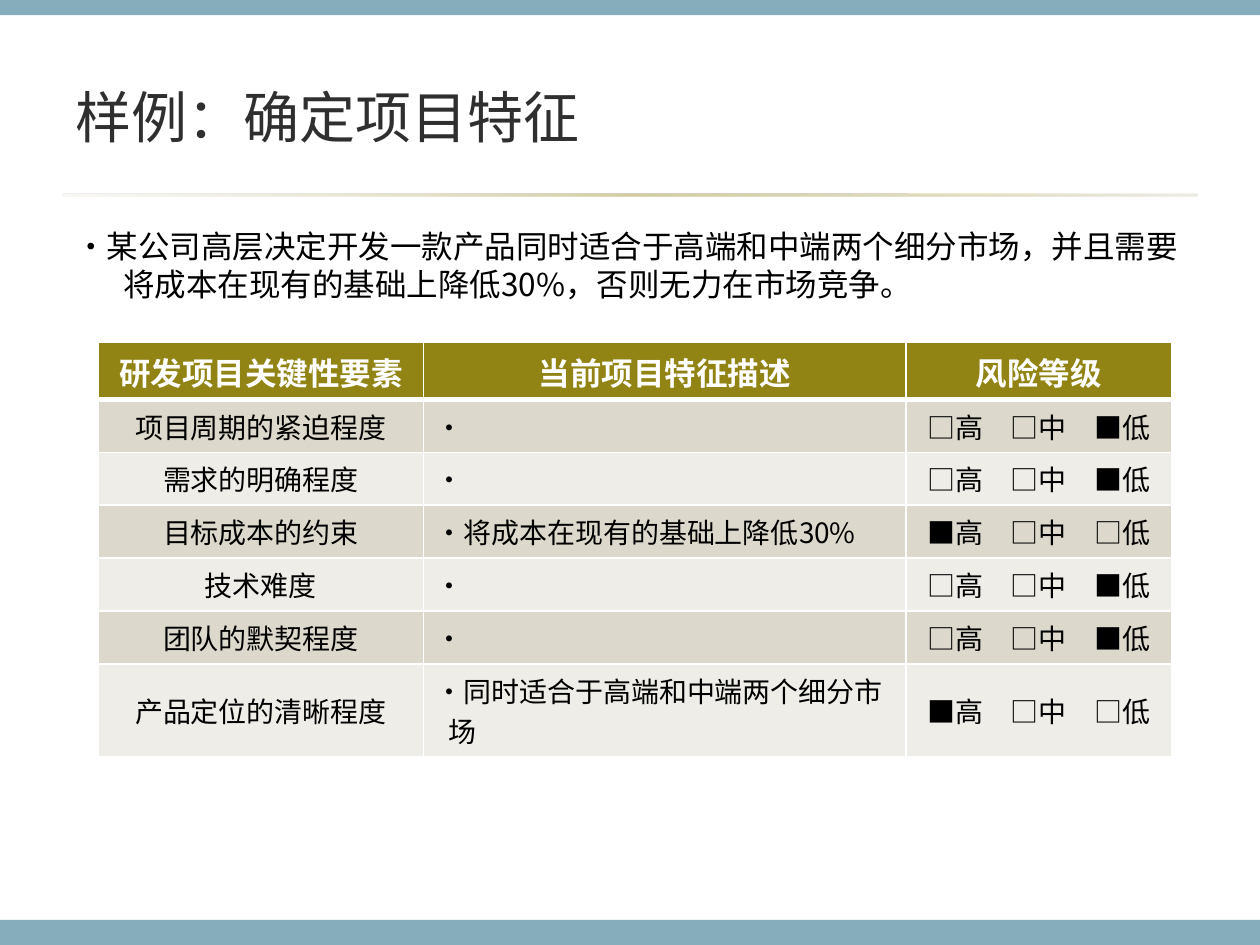
from lxml import etree
from pptx import Presentation
from pptx.dml.color import RGBColor
from pptx.enum.shapes import MSO_SHAPE
from pptx.enum.text import MSO_ANCHOR, PP_ALIGN
from pptx.oxml.ns import qn
from pptx.util import Inches, Pt

RECT = MSO_SHAPE.RECTANGLE
MIDDLE = MSO_ANCHOR.MIDDLE
LEFT, CENTER = PP_ALIGN.LEFT, PP_ALIGN.CENTER
FONT = "Noto Sans CJK SC"
COLORS = {"band": "85ADBC", "olive": "918415", "sand": "DCD9CC", "pale": "EEEDE8",
          "title": "2F2F2F", "black": "000000", "white": "FFFFFF"}

# Size, colour and weight of each kind of text
FORMATS = {
    "title": {"size": Pt(32), "color": "title", "bold": False},
    "body": {"size": Pt(18), "color": "black", "bold": False},
    "header": {"size": Pt(18), "color": "white", "bold": True},
    "cell": {"size": Pt(16), "color": "black", "bold": False},
}

TITLE = "样例：确定项目特征"
BODY = ("·某公司高层决定开发一款产品同时适合于高端和中端两个细分市场，"
        "并且需要将成本在现有的基础上降低30%，否则无力在市场竞争。")
HEADERS = ["研发项目关键性要素", "当前项目特征描述", "风险等级"]
LEVELS = "高中低"
# Key factor, description lines, risk level
FACTORS = [
    ("项目周期的紧迫程度", ["·"], "低"),
    ("需求的明确程度", ["·"], "低"),
    ("目标成本的约束", ["·将成本在现有的基础上降低30%"], "高"),
    ("技术难度", ["·"], "低"),
    ("团队的默契程度", ["·"], "低"),
    ("产品定位的清晰程度", ["·同时适合于高端和中端两个细分市", "场"], "高"),
]
COLUMN_WIDTHS = [2.58, 3.83, 2.11]
HEADER_HEIGHT = 0.45
CELL_PADDING, LINE_HEIGHT = 0.1, 0.32


def rgb(name):
    return RGBColor.from_string(COLORS[name])


def add_color(parent, name, opacity=100):
    solid = etree.SubElement(parent, qn("a:srgbClr"), val=COLORS[name])
    if opacity < 100:
        etree.SubElement(solid, qn("a:alpha"), val=str(opacity * 1000))


def write(paragraph, text, kind, align=LEFT):
    paragraph.alignment = align
    run = paragraph.add_run()
    run.text = text
    style = FORMATS[kind]
    for name, value in {"name": FONT, "size": style["size"], "bold": style["bold"]}.items():
        setattr(run.font, name, value)
    run.font.color.rgb = rgb(style["color"])
    # East Asian typeface
    etree.SubElement(run.font._element, qn("a:ea"), typeface=FONT)


def add_bar(slide, left, top, width, height):
    bar = slide.shapes.add_shape(RECT, Inches(left), Inches(top), Inches(width), Inches(height))
    bar.shadow.inherit = False
    bar.line.fill.background()
    bar.fill.solid()
    bar.fill.fore_color.rgb = rgb("band")
    return bar


def add_divider(slide, left, top, width, height):
    divider = add_bar(slide, left, top, width, height)
    divider.fill.gradient()
    divider.fill.gradient_angle = 0
    stops = divider._element.spPr.find(qn("a:gradFill")).find(qn("a:gsLst"))
    for stop in list(stops):
        stops.remove(stop)
    for position, name, opacity in [(0, "sand", 20), (50, "olive", 40), (100, "sand", 50)]:
        stop = etree.SubElement(stops, qn("a:gs"), pos=str(position * 1000))
        add_color(stop, name, opacity)


def add_text(slide, left, top, width, height, text, kind):
    box = slide.shapes.add_textbox(Inches(left), Inches(top), Inches(width), Inches(height))
    frame = box.text_frame
    frame.word_wrap = True
    write(frame.paragraphs[0], text, kind)
    return frame


def set_indent(paragraph, left, first=0):
    properties = paragraph._p.get_or_add_pPr()
    properties.set("marL", str(Inches(left)))
    properties.set("indent", str(Inches(first)))


def add_title(slide, left, top, width, height):
    add_text(slide, left, top, width, height, TITLE, "title").vertical_anchor = MIDDLE


def add_body(slide, left, top, width, height):
    paragraph = add_text(slide, left, top, width, height, BODY, "body").paragraphs[0]
    paragraph.space_before = Pt(3.6)
    set_indent(paragraph, 0.38, -0.38)


def style_cell(cell, fill, top_width, bottom_width):
    cell.vertical_anchor = MIDDLE
    properties = cell._tc.get_or_add_tcPr()
    for side, width in {"lnL": 1, "lnR": 1, "lnT": top_width, "lnB": bottom_width}.items():
        border = etree.SubElement(properties, qn(f"a:{side}"), w=str(Pt(width)))
        add_color(etree.SubElement(border, qn("a:solidFill")), "white")
    cell.fill.solid()
    cell.fill.fore_color.rgb = rgb(fill)


def risk_text(risk):
    return "　".join(("■" if level == risk else "□") + level for level in LEVELS)


def add_risk_table(slide, left, top):
    rows = [[[header] for header in HEADERS]]
    rows += [[[factor], lines, [risk_text(risk)]] for factor, lines, risk in FACTORS]
    # Each row is as tall as its longest description
    heights = [HEADER_HEIGHT]
    heights += [CELL_PADDING + LINE_HEIGHT * len(lines) for _, lines, _ in FACTORS]
    table = slide.shapes.add_table(
        len(rows), len(HEADERS), Inches(left), Inches(top),
        Inches(sum(COLUMN_WIDTHS)), Inches(sum(heights))).table
    for column, width in zip(table.columns, COLUMN_WIDTHS):
        column.width = Inches(width)

    for r, row in enumerate(rows):
        table.rows[r].height = Inches(heights[r])
        kind = "cell" if r else "header"
        fill = ("pale", "sand")[r % 2] if r else "olive"
        for c, lines in enumerate(row):
            cell = table.cell(r, c)
            # The thick rule lies between the header and the first factor
            style_cell(cell, fill, 3 if r == 1 else 1, 3 if r == 0 else 1)
            align = LEFT if r and c == 1 else CENTER
            frame = cell.text_frame
            write(frame.paragraphs[0], lines[0], kind, align)
            for line in lines[1:]:
                paragraph = frame.add_paragraph()
                write(paragraph, line, kind, align)
                set_indent(paragraph, 0.1)


def main():
    deck = Presentation()
    deck.slide_width, deck.slide_height = Inches(10), Inches(7.5)
    slide = deck.slides.add_slide(deck.slide_layouts[6])
    # Frame
    add_bar(slide, 0, 7.3, 10, 0.2)
    add_bar(slide, 0, 0, 10, 0.12)
    add_divider(slide, 0.5, 1.54, 9, 0.02)
    # Content
    add_title(slide, 0.5, 0.3, 9, 1.25)
    add_body(slide, 0.5, 1.75, 9, 1.45)
    add_risk_table(slide, 0.78, 2.72)
    deck.save("out.pptx")


if __name__ == "__main__":
    main()
